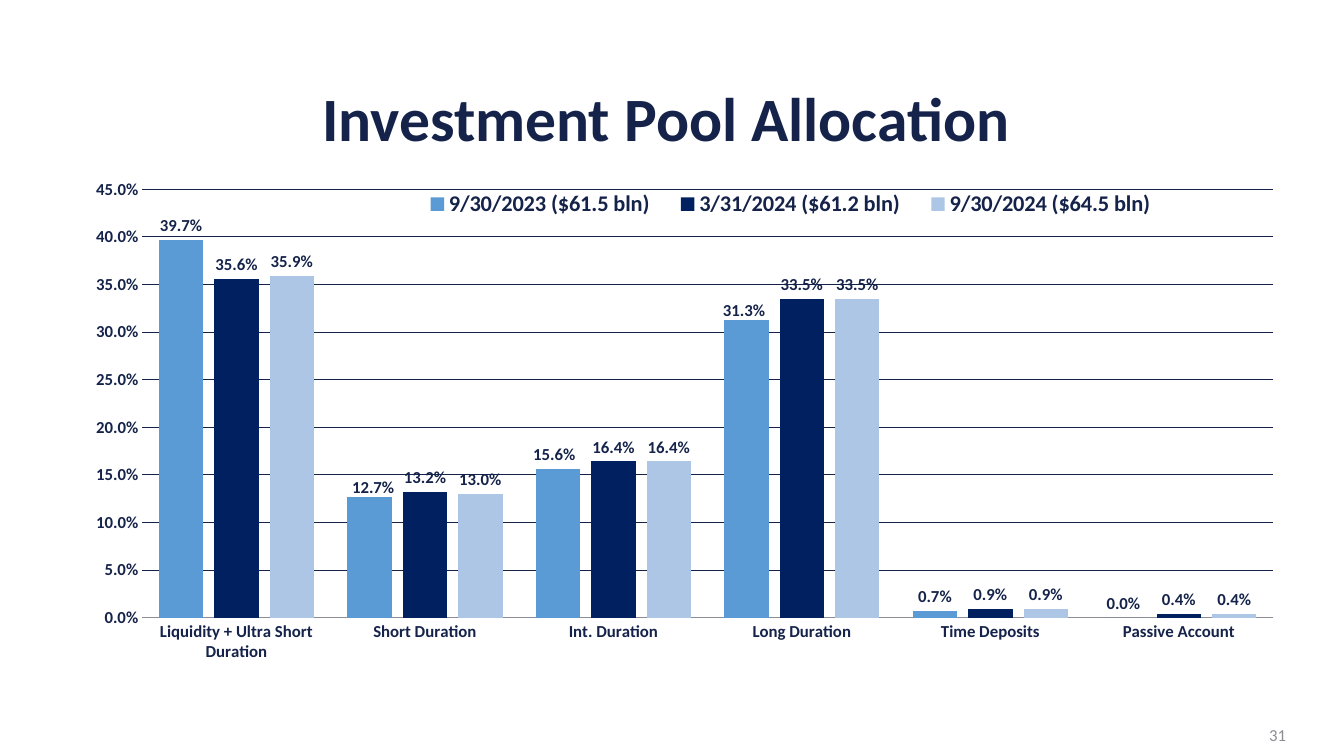
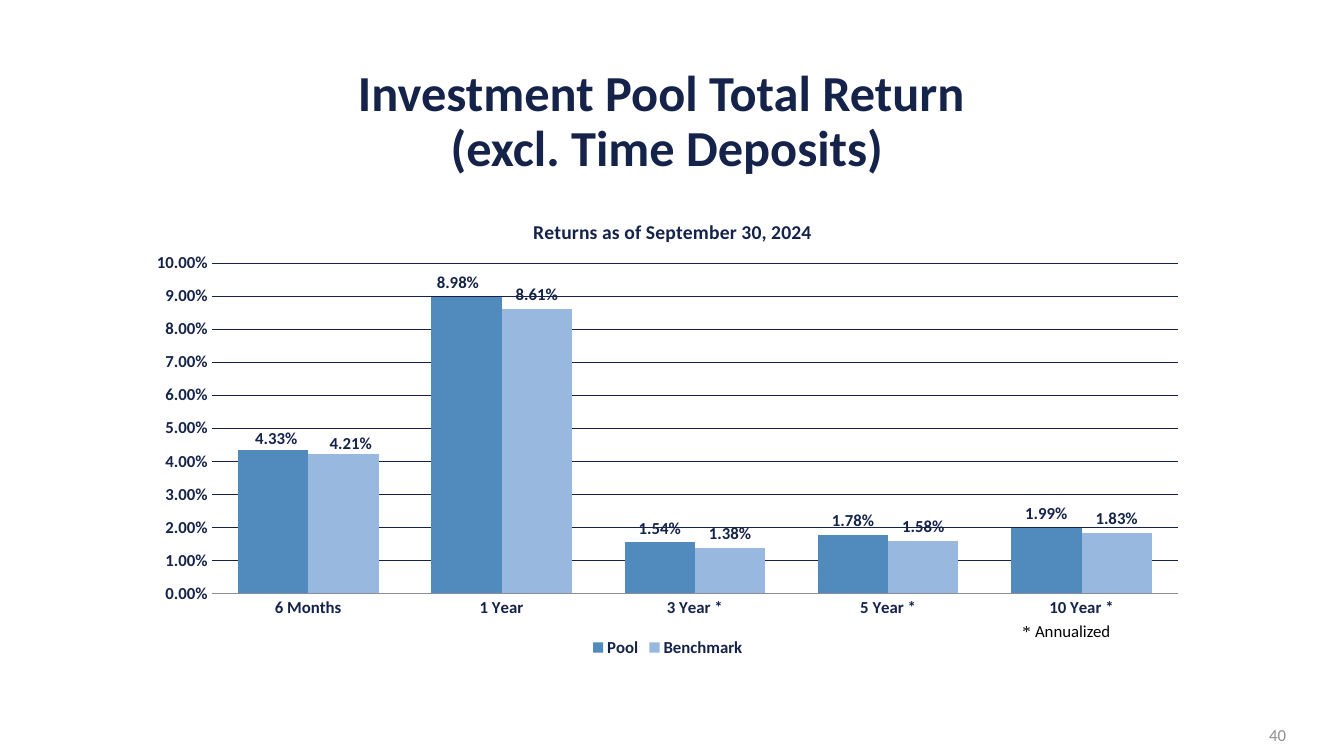
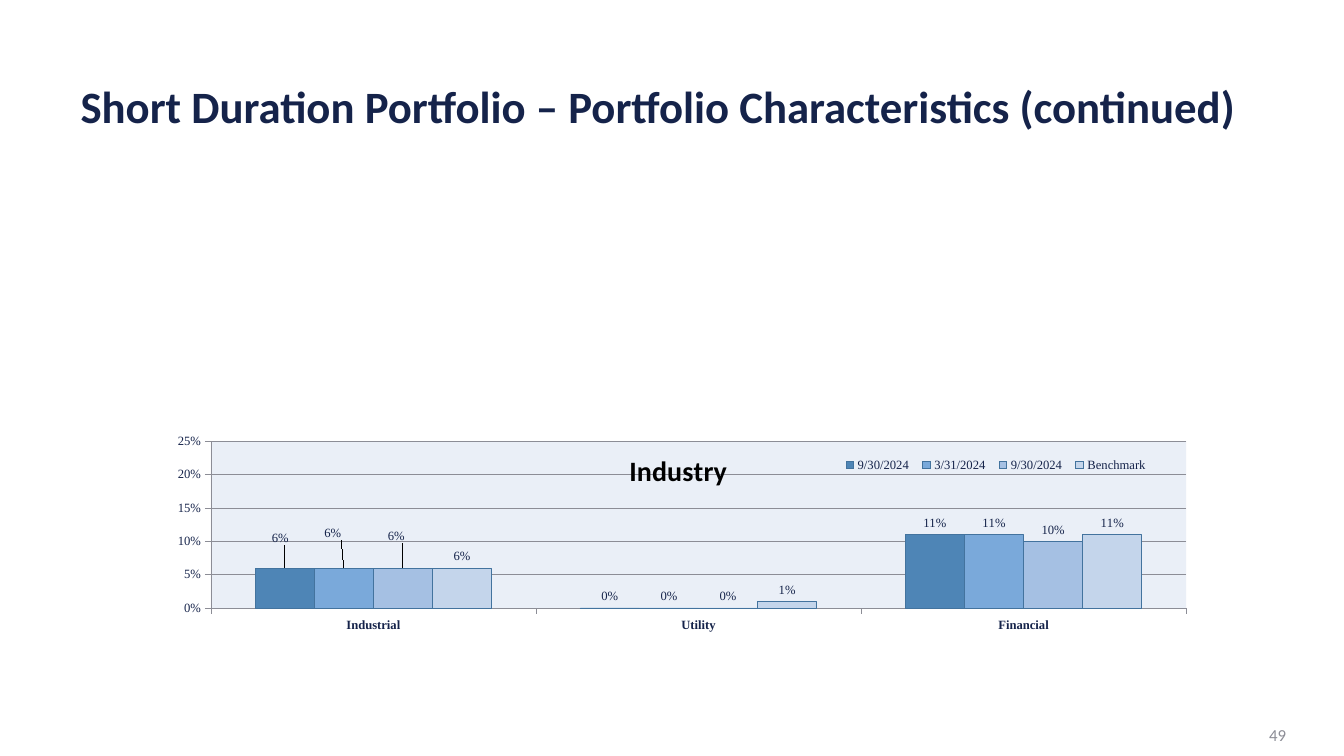
from dataclasses import dataclass

from lxml.etree import SubElement
from pptx import Presentation
from pptx.chart.data import CategoryChartData
from pptx.dml.color import RGBColor
from pptx.enum.chart import XL_CHART_TYPE, XL_LABEL_POSITION, XL_LEGEND_POSITION, XL_TICK_MARK
from pptx.enum.text import MSO_ANCHOR, PP_ALIGN
from pptx.oxml.ns import qn
from pptx.util import Cm, Pt


@dataclass(frozen=True)
class Theme:
    navy: str = "15234A"
    gray: str = "8C8D96"
    black: str = "000000"
    white: str = "FFFFFF"
    panel: str = "EAEFF7"
    outline: str = "43739E"
    sans: str = "Calibri"
    serif: str = "Times New Roman"
    small: int = 9
    body: int = 12
    subtitle: int = 14
    legend: int = 16
    heading: int = 20
    hairline: float = 0.5


THEME = Theme()
NUMBER_AREA = (25.04, 18.01, 7.62, 1.02)

SLIDES = [
    {
        "number": "31",
        "title": {"text": "Investment Pool Allocation", "area": (1.65, 1.9, 30.28, 2.31),
                  "size": 44, "align": PP_ALIGN.CENTER},
        "chart": {
            "area": (1.65, 4.24, 30.71, 12.93),
            "plot": (0.063, 0.041, 0.928, 0.835),
            "categories": ["Liquidity + Ultra Short Duration", "Short Duration", "Int. Duration",
                           "Long Duration", "Time Deposits", "Passive Account"],
            "series": [
                ("9/30/2023 ($61.5 bln)", "5B9BD5", (0.397, 0.127, 0.156, 0.313, 0.007, 0)),
                ("3/31/2024 ($61.2 bln)", "002060", (0.356, 0.132, 0.164, 0.335, 0.009, 0.004)),
                ("9/30/2024 ($64.5 bln)", "ADC6E5", (0.359, 0.13, 0.164, 0.335, 0.009, 0.004)),
            ],
            "nudges": [(0, 1, 0.003, 0.01), (0, 2, -0.003, 0), (0, 3, -0.002, 0.01)],
            "format": "0.0%", "maximum": 0.45, "step": 0.05, "gap": 75, "overlap": -25,
            "legend": XL_LEGEND_POSITION.BOTTOM, "legend_size": THEME.legend,
            "legend_area": (0.28, 0.04, 0.63, 0.06),
        },
    },
    {
        "number": "40",
        "title": {"text": "Investment Pool Total Return \n(excl. Time Deposits)",
                  "area": (5.38, 1.5, 22.86, 3.18), "size": 36, "align": PP_ALIGN.CENTER},
        "chart": {
            "area": (3.43, 4.83, 26.8, 11.84),
            "plot": (0.071, 0.152, 0.909, 0.703),
            "heading": ("Returns as of September 30, 2024", THEME.subtitle, THEME.navy, (0.37, 0.05)),
            "categories": ["6 Months", "1 Year", "3 Year *", "5 Year *", "10 Year *"],
            "series": [
                ("Pool", "518ABD", (0.0433, 0.0898, 0.0154, 0.0178, 0.0199)),
                ("Benchmark", "98B8E0", (0.0421, 0.0861, 0.0138, 0.0158, 0.0183)),
            ],
            "nudges": [(0, 0, 0.003, 0.004), (0, 1, -0.008, 0), (1, 0, 0.007, 0.008)],
            "format": "0.00%", "maximum": 0.1, "step": 0.01, "gap": 75, "overlap": 0,
            "legend": XL_LEGEND_POSITION.BOTTOM, "legend_size": THEME.body,
        },
        "note": {"area": (22.43, 15.52, 8.89, 0.76),
                 "spans": [("* ", THEME.serif), ("Annualized", THEME.sans)]},
    },
    {
        "number": "49",
        "title": {"text": "Short Duration Portfolio – Portfolio Characteristics (continued)",
                  "area": (1.78, 2.11, 30.28, 1.27), "size": 32, "align": PP_ALIGN.LEFT},
        "chart": {
            "area": (3.07, 10.8, 27.71, 6.12),
            "plot": (0.081, 0.052, 0.887, 0.687),
            "heading": ("Industry", THEME.heading, THEME.black, (0.457, 0.07)),
            "categories": ["Industrial", "Utility", "Financial"],
            "series": [
                ("9/30/2024", "4E85B6", (0.06, 0, 0.11)),
                ("3/31/2024", "7AA9DA", (0.06, 0, 0.11)),
                ("9/30/2024", "A5C0E3", (0.06, 0, 0.1)),
                ("Benchmark", "C4D5EB", (0.06, 0.01, 0.11)),
            ],
            "nudges": [(0, 0, -0.004, -0.075), (1, 0, -0.01, -0.095), (2, 0, -0.006, -0.086)],
            "format": "0%", "maximum": 0.25, "step": 0.05, "gap": 150, "overlap": 0,
            "legend": XL_LEGEND_POSITION.TOP, "legend_size": THEME.small,
            "legend_area": (0.65, 0.1, 0.29, 0.1),
            "framed": True,
        },
    },
]


def style_font(font, size, color, name=THEME.sans, bold=False):
    for key, value in {"size": Pt(size), "name": name, "bold": bold}.items():
        setattr(font, key, value)
    font.color.rgb = RGBColor.from_string(color)


def style_line(line, color):
    line.width = Pt(THEME.hairline)
    line.color.rgb = RGBColor.from_string(color)


def add_box(page, area, align, anchor):
    box = page.shapes.add_textbox(*map(Cm, area))
    box.text_frame.word_wrap = True
    box.text_frame.vertical_anchor = anchor
    para = box.text_frame.paragraphs[0]
    para.alignment = align
    return para


def add_title(page, text, area, size, align):
    para = add_box(page, area, align, MSO_ANCHOR.MIDDLE)
    para.line_spacing = 0.9
    para.text = text
    for span in para.runs:
        style_font(span.font, size, THEME.navy, bold=True)


def add_spans(page, area, spans, color, align, anchor):
    para = add_box(page, area, align, anchor)
    for text, name in spans:
        span = para.add_run()
        span.text = text
        style_font(span.font, THEME.body, color, name)


def set_layout(parent, index, modes, values):
    for old in parent.findall(qn("c:layout")):
        parent.remove(old)
    layout = SubElement(parent, qn("c:layout"))
    parent.remove(layout)
    parent.insert(index, layout)
    manual = SubElement(layout, qn("c:manualLayout"))
    settings = [*modes.items(), *zip("xywh", values)]
    for tag, value in settings:
        SubElement(manual, qn(f"c:{tag}")).set("val", str(value))


def fill_area(parent, color, before=None):
    properties = SubElement(parent, qn("c:spPr"))
    if before is not None:
        before.addprevious(properties)
    fill = SubElement(properties, qn("a:solidFill"))
    SubElement(fill, qn("a:srgbClr")).set("val", color)


def style_axes(chart, info, framed, font):
    tick = XL_TICK_MARK.OUTSIDE if framed else XL_TICK_MARK.NONE
    for axis in (chart.category_axis, chart.value_axis):
        axis.major_tick_mark = tick
        axis.minor_tick_mark = XL_TICK_MARK.NONE
        style_line(axis.format.line, THEME.gray)
        style_font(axis.tick_labels.font, **font)
    chart.category_axis.tick_labels.font.bold = True
    values = chart.value_axis
    settings = {"minimum_scale": 0, "maximum_scale": info["maximum"],
                "major_unit": info["step"], "has_major_gridlines": True}
    for key, value in settings.items():
        setattr(values, key, value)
    values.tick_labels.number_format = info["format"]
    values.tick_labels.number_format_is_linked = False
    style_line(values.major_gridlines.format.line, THEME.gray if framed else THEME.navy)
    if not framed:
        values.format.line.fill.background()


def style_series(chart, info, framed, font):
    plot = chart.plots[0]
    for key, value in {"gap_width": info["gap"], "overlap": info["overlap"],
                       "vary_by_categories": False}.items():
        setattr(plot, key, value)
    for series, (_, color, _) in zip(plot.series, info["series"]):
        series.format.fill.solid()
        series.format.fill.fore_color.rgb = RGBColor.from_string(color)
        if framed:
            style_line(series.format.line, THEME.outline)
        labels = series.data_labels
        for key, value in {"show_value": True, "number_format": info["format"],
                           "number_format_is_linked": False,
                           "position": XL_LABEL_POSITION.OUTSIDE_END}.items():
            setattr(labels, key, value)
        style_font(labels.font, **font)
    for row, column, *shift in info["nudges"]:
        series = plot.series[row]
        label = series.points[column].data_label
        style_font(label.font, **font)
        label.position = XL_LABEL_POSITION.OUTSIDE_END
        for element in series.data_labels._element.findall(qn("c:dLbl")):
            if element.find(qn("c:idx")).get("val") == str(column):
                set_layout(element, 1, {}, shift)


def add_column_chart(page, info):
    data = CategoryChartData(number_format=info["format"])
    data.categories = info["categories"]
    for name, _, values in info["series"]:
        data.add_series(name, values)
    frame = page.shapes.add_chart(XL_CHART_TYPE.COLUMN_CLUSTERED, *map(Cm, info["area"]), data)
    chart = frame.chart
    framed = info.get("framed", False)
    font = {"size": THEME.small if framed else THEME.body, "color": THEME.navy,
            "name": THEME.serif if framed else THEME.sans, "bold": not framed}
    style_font(chart.font, **font)
    style_axes(chart, info, framed, font)
    style_series(chart, info, framed, font)

    edges = {"xMode": "edge", "yMode": "edge"}
    chart.has_title = "heading" in info
    if chart.has_title:
        text, size, color, corner = info["heading"]
        para = chart.chart_title.text_frame.paragraphs[0]
        span = para.add_run()
        span.text = text
        style_font(span.font, size, color, bold=True)
        set_layout(chart.chart_title._element, 1, edges, corner)

    chart.has_legend = True
    chart.legend.position = info["legend"]
    chart.legend.include_in_layout = False
    style_font(chart.legend.font, **{**font, "size": info["legend_size"]})
    if "legend_area" in info:
        set_layout(chart.legend._element, 1, edges, info["legend_area"])

    space = chart._chartSpace
    plot_area = space.find(f"{qn('c:chart')}/{qn('c:plotArea')}")
    set_layout(plot_area, 0, {"layoutTarget": "inner", **edges}, info["plot"])
    if framed:
        fill_area(plot_area, THEME.panel)
        fill_area(space, THEME.white, before=space.find(qn("c:txPr")))


def main():
    deck = Presentation()
    deck.slide_width, deck.slide_height = Cm(33.87), Cm(19.05)
    for content in SLIDES:
        page = deck.slides.add_slide(deck.slide_layouts[6])
        add_title(page, **content["title"])
        add_column_chart(page, content["chart"])
        if "note" in content:
            add_spans(page, **content["note"], color=THEME.black,
                      align=PP_ALIGN.CENTER, anchor=MSO_ANCHOR.TOP)
        add_spans(page, NUMBER_AREA, [(content["number"], THEME.sans)], THEME.gray,
                  PP_ALIGN.RIGHT, MSO_ANCHOR.MIDDLE)
    deck.save("out.pptx")


if __name__ == "__main__":
    main()
